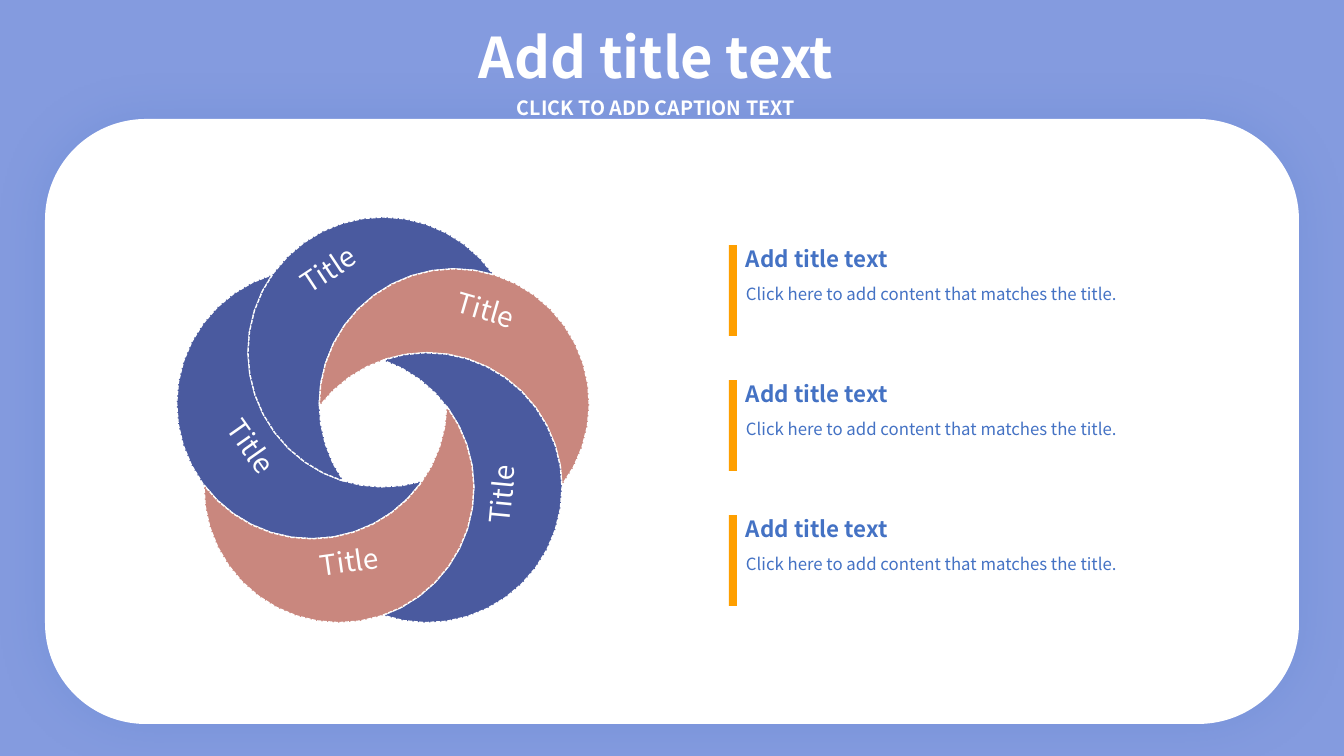
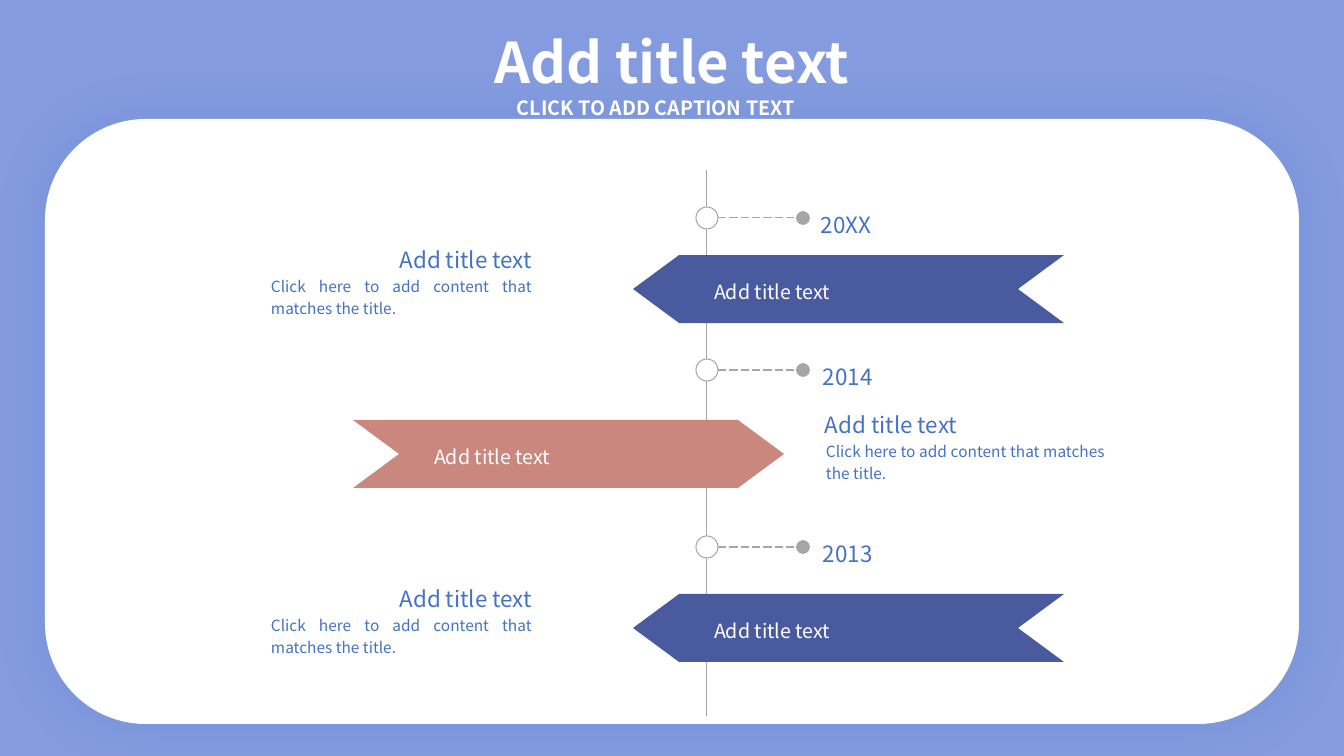
from math import acos, cos, degrees, radians, sin

from lxml.etree import SubElement
from pptx import Presentation
from pptx.dml.color import RGBColor
from pptx.enum.dml import MSO_LINE as Dash
from pptx.enum.shapes import MSO_CONNECTOR as Link, MSO_SHAPE as Kind
from pptx.enum.text import MSO_ANCHOR as Anchor, PP_ALIGN as Align
from pptx.oxml.ns import qn
from pptx.util import Pt

S = 9072
FONT = "Noto Sans CJK SC"
SKY, WHITE, BLUE = "849BDF", "FFFFFF", "4472C4"
NAVY, ROSE, AMBER, GRAY = "4A5A9F", "C9877E", "FE9F00", "A6A6A6"
TITLE = "Add title text"
BODY = "Click here to add content that matches the title."
NONE = (0, 0, 0, 0)
color = RGBColor.from_string


def paint(shape, fill, edge=None, width=0.75):
    shape.shadow.inherit = False
    shape.fill.solid()
    shape.fill.fore_color.rgb = color(fill)
    if edge:
        shape.line.color.rgb = color(edge)
        shape.line.width = Pt(width)
    else:
        shape.line.fill.background()


def write(item, text, size, ink, bold=False, align=Align.LEFT, gap=1.0,
          pad=(10, 5, 10, 5), anchor=Anchor.TOP):
    frame = item.text_frame
    frame.word_wrap = True
    frame.margin_left, frame.margin_top = pad[0] * S, pad[1] * S
    frame.margin_right, frame.margin_bottom = pad[2] * S, pad[3] * S
    frame.vertical_anchor = anchor
    para = frame.paragraphs[0]
    para.text = text
    para.alignment = align
    para.line_spacing = gap
    para.font.name = FONT
    para.font.size = Pt(size)
    para.font.bold = bold
    para.font.color.rgb = color(ink)


deck = Presentation()
deck.slide_width, deck.slide_height = 1344 * S, 756 * S

pages = []
for head in [(468, 22, 376, 68), (480, 27, 384, 68)]:
    page = deck.slides.add_slide(deck.slide_layouts[6])
    page.background.fill.solid()
    page.background.fill.fore_color.rgb = color(SKY)
    panel = page.shapes.add_shape(Kind.ROUNDED_RECTANGLE, 45 * S, 119 * S, 1254 * S, 605 * S)
    paint(panel, WHITE)
    glow = SubElement(panel._element.spPr.find(qn("a:effectLst")), qn("a:outerShdw"),
                      blurRad=str(Pt(37)), dist="0", algn="ctr", rotWithShape="0")
    tint = SubElement(glow, qn("a:srgbClr"), val=BLUE)
    SubElement(tint, qn("a:alpha"), val="22000")
    heads = [
        (head, TITLE, 40, Align.CENTER),
        ((517, 96, 309, 24), "CLICK TO ADD CAPTION TEXT", 14, Align.LEFT),
    ]
    for box, text, size, align in heads:
        item = page.shapes.add_textbox(*[v * S for v in box])
        write(item, text, size, WHITE, True, align, pad=NONE, anchor=Anchor.MIDDLE)
    pages.append(page)
wheel, story = pages

MID_X, MID_Y, ORBIT, RADIUS = 383, 427, 75, 135
half = degrees(acos(ORBIT * sin(radians(36)) / RADIUS))
blades = [
    (NAVY, 54.9, (0, 51, 0, 0), Anchor.MIDDLE),
    (NAVY, -33.5, (0, 12, 0, 0), Anchor.TOP),
    (ROSE, 16.2, (8, 12, 0, 0), Anchor.TOP),
    (NAVY, -84.6, (0, 64, 0, 0), Anchor.MIDDLE),
    (ROSE, -8.1, (0, 72, 0, 0), Anchor.MIDDLE),
]
for i, (fill, turn, pad, anchor) in enumerate(blades):
    start = 198 + 72 * i - turn
    aim = start + 126
    arcs = [(start, aim + half, aim + 360 - half, 24),
            (start + 72, aim + 180 + half, aim + 180 - half, 16)]
    dots = []
    for hub, first, last, steps in arcs:
        for n in range(steps):
            angle = radians(first + (last - first) * n / steps)
            dots.append((round((ORBIT * cos(radians(hub)) + RADIUS * cos(angle)) * S),
                         round((ORBIT * sin(radians(hub)) + RADIUS * sin(angle)) * S)))
    path = wheel.shapes.build_freeform(*dots[0])
    path.add_line_segments(dots[1:], close=True)
    blade = path.convert_to_shape()
    x, y = blade.left + blade.width / 2, blade.top + blade.height / 2
    c, s = cos(radians(turn)), sin(radians(turn))
    blade.left = round(MID_X * S + x * c - y * s - blade.width / 2)
    blade.top = round(MID_Y * S + x * s + y * c - blade.height / 2)
    blade.rotation = turn
    paint(blade, fill, WHITE, 1)
    blade.line.dash_style = Dash.SQUARE_DOT
    write(blade, "Title", 20, WHITE, align=Align.CENTER, gap=1.2, pad=pad, anchor=anchor)

for i in range(3):
    top = 240 + 135 * i
    name = wheel.shapes.add_textbox(736 * S, top * S, 294 * S, 37 * S)
    write(name, TITLE, 16, BLUE, True)
    body = wheel.shapes.add_textbox(736 * S, (top + 39) * S, 424 * S, 30 * S)
    write(body, BODY, 12, BLUE)
    bar = wheel.shapes.add_shape(Kind.RECTANGLE, 729 * S, (top + 5) * S, 8 * S, 91 * S)
    paint(bar, AMBER)

AXIS = 707
rows = [
    ("20XX", 811, 218, 255, True),
    ("2014", 813, 370, 420, False),
    ("2013", 813, 547, 594, True),
]
lines = [(AXIS, 170, AXIS, 716)] + [(AXIS + 11, row[2], 803, row[2]) for row in rows]
for ends in lines:
    line = story.shapes.add_connector(Link.STRAIGHT, *[v * S for v in ends])
    line.line.color.rgb = color(GRAY)
    line.line.width = Pt(0.75)
    props = line._element.spPr
    if ends[1] == ends[3]:
        line.line.dash_style = Dash.LONG_DASH
        SubElement(props.find(qn("a:ln")), qn("a:tailEnd"), type="oval", w="lg", len="lg")
    SubElement(props, qn("a:effectLst"))

for year, x, y, top, left in rows:
    ring = story.shapes.add_shape(Kind.OVAL, (AXIS - 11) * S, (y - 11) * S, 22 * S, 22 * S)
    paint(ring, WHITE, GRAY)

    edge, fill = (633, NAVY) if left else (353, ROSE)
    ribbon = story.shapes.add_shape(Kind.CHEVRON, edge * S, top * S, 431 * S, 68 * S)
    ribbon.adjustments[0] = 0.677
    ribbon.rotation = 180 if left else 0
    paint(ribbon, fill)
    label = story.shapes.add_shape(Kind.RECTANGLE, (edge + 71) * S, (top + 15) * S, 144 * S, 36 * S)
    paint(label, fill)
    write(label, TITLE, 14, WHITE, gap=1.2)

    side = Align.RIGHT if left else Align.LEFT
    texts = [
        ((x, y - 17, 77, 40), year, 16, Align.LEFT),
        ((381 if left else 815, top - 19, 161, 40), TITLE, 16, side),
        ((261 if left else 816, top + 13, 281 if left else 299, 53), BODY, 11, Align.JUSTIFY),
    ]
    for box, text, size, align in texts:
        item = story.shapes.add_textbox(*[v * S for v in box])
        write(item, text, size, BLUE, align=align, gap=1.2)

deck.save("out.pptx")
